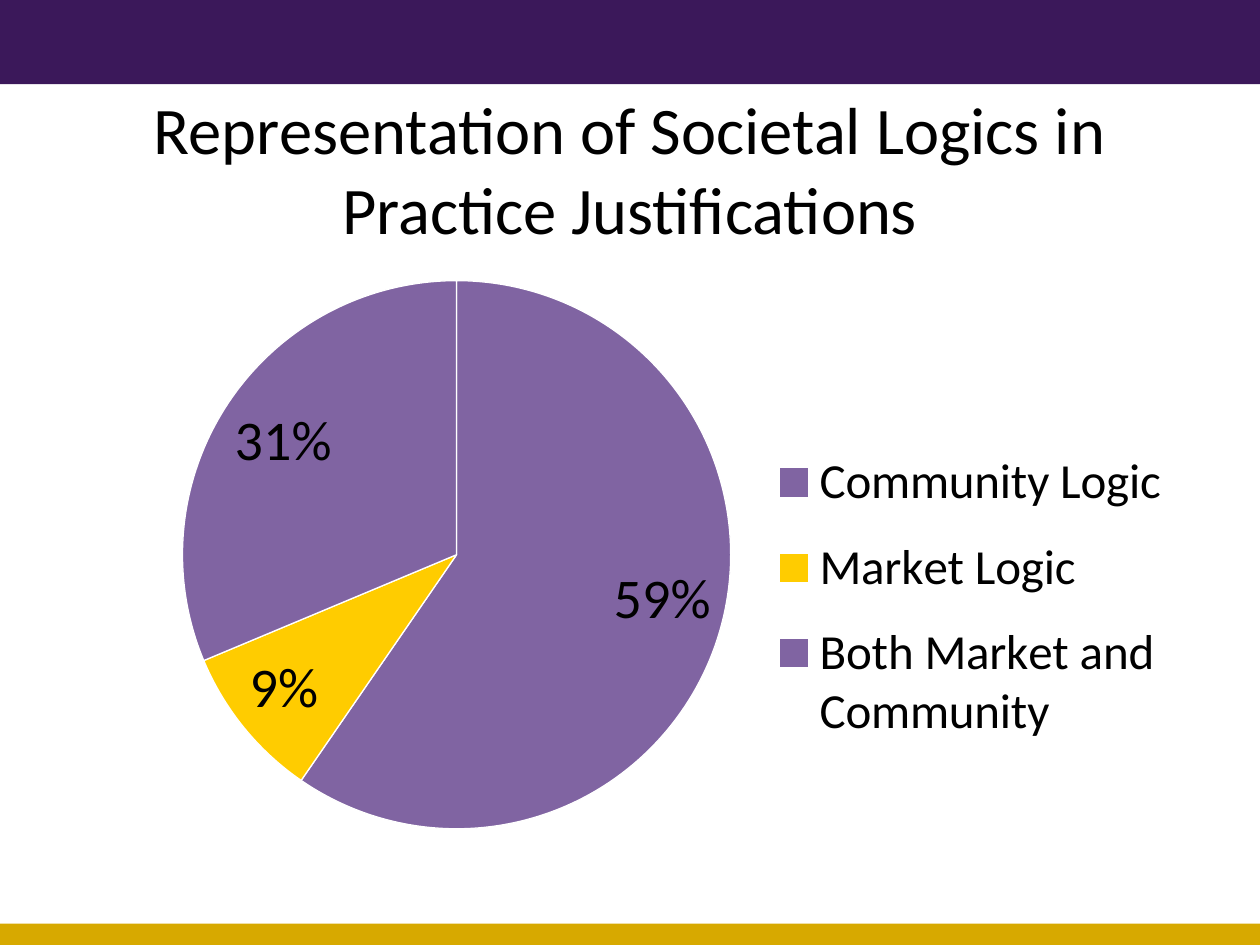
"""Build a slide with a pie chart of societal logics in practice justifications."""
import pptx
import pptx.chart.data
import pptx.dml.color
import pptx.enum.chart
import pptx.enum.shapes
import pptx.enum.text
import pptx.oxml
import pptx.oxml.ns
import pptx.util

Cm = pptx.util.Cm
COLOURS = {
    "band": "3B185A",
    "footer": "D7A900",
    "text": "000000",
    "purple": "8064A2",
    "yellow": "FFCC00",
    "white": "FFFFFF",
}
SLICES = [
    ("Community Logic", 59, "purple"),
    ("Market Logic", 9, "yellow"),
    ("Both Market and Community", 31, "purple"),
]
WIDTH, HEIGHT = 25.4, 19.05


def rgb(name):
    return pptx.dml.color.RGBColor.from_string(COLOURS[name])


def format_font(font, size):
    values = {"name": "Calibri", "size": pptx.util.Pt(size), "bold": False}
    for key, value in values.items():
        setattr(font, key, value)
    font.color.rgb = rgb("text")


def add_band(page, top, height, colour):
    band = page.shapes.add_shape(
        pptx.enum.shapes.MSO_SHAPE.RECTANGLE, 0, Cm(top), Cm(WIDTH), Cm(height))
    band.shadow.inherit = False
    band.fill.solid()
    band.fill.fore_color.rgb = rgb(colour)
    band.line.fill.background()


def add_title(page, text):
    box = page.shapes.add_textbox(Cm(1.27), Cm(2.12), Cm(22.86), Cm(2.54))
    values = {"word_wrap": True, "vertical_anchor": pptx.enum.text.MSO_ANCHOR.MIDDLE}
    for key, value in values.items():
        setattr(box.text_frame, key, value)
    para = box.text_frame.paragraphs[0]
    para.alignment = pptx.enum.text.PP_ALIGN.CENTER
    span = para.add_run()
    span.text = text
    format_font(span.font, 38)


def make_layout(x, y, w, h, inner=False):
    target = '<c:layoutTarget val="inner"/>' if inner else ""
    modes = "".join(f'<c:{axis}Mode val="edge"/>' for axis in "xy")
    sizes = "".join(f'<c:{key} val="{value}"/>'
                    for key, value in zip("xywh", (x, y, w, h)))
    return pptx.oxml.parse_xml(
        f'<c:layout {pptx.oxml.ns.nsdecls("c")}><c:manualLayout>'
        f"{target}{modes}{sizes}</c:manualLayout></c:layout>")


def place_plot(chart, layout):
    area = chart.plots[0]._element.getparent()
    for old in area.findall(pptx.oxml.ns.qn("c:layout")):
        area.remove(old)
    area.insert(0, layout)


def place_legend(legend, layout):
    element = legend._element
    for old in element.findall(pptx.oxml.ns.qn("c:layout")):
        element.remove(old)
    element.find(pptx.oxml.ns.qn("c:legendPos")).addnext(layout)


def add_pie(page):
    data = pptx.chart.data.CategoryChartData()
    data.categories = [name for name, _, _ in SLICES]
    data.add_series("Series 1", [value for _, value, _ in SLICES])
    chart = page.shapes.add_chart(
        pptx.enum.chart.XL_CHART_TYPE.PIE,
        Cm(2.12), Cm(5.29), Cm(21.8), Cm(12.28), data).chart
    chart.has_title = False
    format_font(chart.font, 18)
    plot = chart.plots[0]
    plot.vary_by_categories = True
    for index, (_, _, colour) in enumerate(SLICES):
        style = plot.series[0].points[index].format
        style.fill.solid()
        style.fill.fore_color.rgb = rgb(colour)
        style.line.color.rgb = rgb("white")
        style.line.width = pptx.util.Pt(0.75)
    plot.has_data_labels = True
    labels = {
        "show_value": True,
        "show_percentage": False,
        "number_format": '0"%"',
        "number_format_is_linked": False,
        "position": pptx.enum.chart.XL_LABEL_POSITION.INSIDE_END,
    }
    for key, value in labels.items():
        setattr(plot.data_labels, key, value)
    format_font(plot.data_labels.font, 32)
    chart.has_legend = True
    chart.legend.position = pptx.enum.chart.XL_LEGEND_POSITION.RIGHT
    chart.legend.include_in_layout = False
    format_font(chart.legend.font, 28)
    place_plot(chart, make_layout(0.07, 0.03, 0.51, 0.9, inner=True))
    place_legend(chart.legend, make_layout(0.61, 0.27, 0.38, 0.56))


def main():
    deck = pptx.Presentation()
    deck.slide_width, deck.slide_height = Cm(WIDTH), Cm(HEIGHT)
    page = deck.slides.add_slide(deck.slide_layouts[6])
    add_band(page, 0, 1.7, "band")
    add_band(page, HEIGHT - 0.43, 0.43, "footer")
    add_title(page, "Representation of Societal Logics in Practice Justifications")
    add_pie(page)
    deck.save("out.pptx")


if __name__ == "__main__":
    main()
